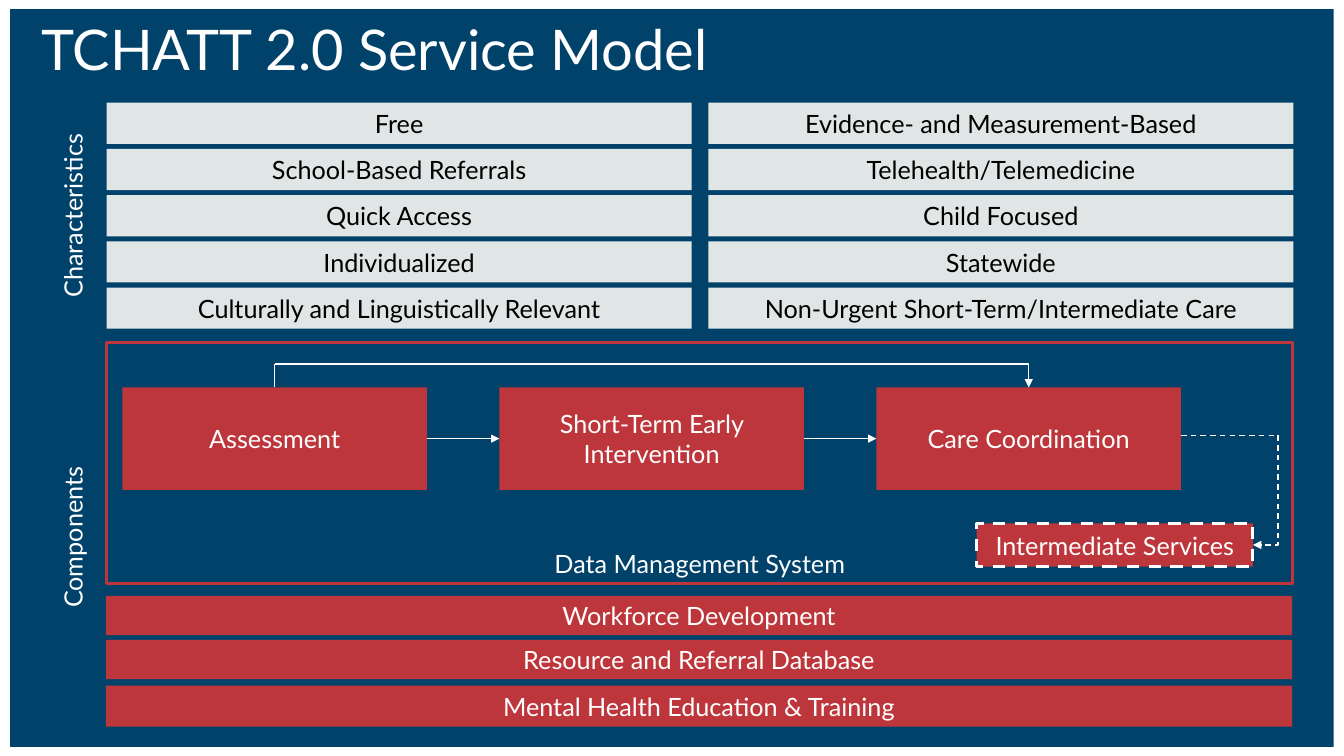
from dataclasses import dataclass
from typing import Optional

import pptx
import pptx.dml.color
import pptx.enum.dml
import pptx.enum.shapes
import pptx.enum.text
import pptx.oxml.ns
import pptx.oxml.xmlchemy
import pptx.util

Pt = pptx.util.Pt
RGBColor = pptx.dml.color.RGBColor
ANCHOR = pptx.enum.text.MSO_ANCHOR
ALIGN = pptx.enum.text.PP_ALIGN
CONNECTOR = pptx.enum.shapes.MSO_CONNECTOR
DASH = pptx.enum.dml.MSO_LINE.DASH
qn = pptx.oxml.ns.qn
new_element = pptx.oxml.xmlchemy.OxmlElement

NAVY = RGBColor(0x01, 0x42, 0x6A)
RED = RGBColor(0xBD, 0x36, 0x3C)
PALE = RGBColor(0xE0, 0xE6, 0xE6)
WHITE = RGBColor(0xFF, 0xFF, 0xFF)
BLACK = RGBColor(0, 0, 0)
FONT = "Lato"


@dataclass
class Box:
    text: str
    left: float
    top: float
    width: float
    height: float
    fill: Optional[RGBColor] = RED
    line: Optional[RGBColor] = None
    dashed: bool = False
    color: RGBColor = WHITE
    size: float = 18
    anchor: ANCHOR = ANCHOR.MIDDLE
    align: ALIGN = ALIGN.CENTER


@dataclass
class Link:
    start: tuple[float, float]
    end: tuple[float, float]
    bend: Optional[float] = None  # elbow position as a share of the width
    dashed: bool = False
    arrow: bool = True


def write_text(shape, box: Box) -> None:
    text_frame = shape.text_frame
    text_frame.text = box.text
    text_frame.word_wrap = True
    text_frame.vertical_anchor = box.anchor
    paragraph = text_frame.paragraphs[0]
    paragraph.alignment = box.align
    font = paragraph.runs[0].font
    font.name = FONT
    font.size = Pt(box.size)
    font.color.rgb = box.color


def add_box(slide, box: Box):
    shape = slide.shapes.add_shape(
        pptx.enum.shapes.MSO_SHAPE.RECTANGLE,
        Pt(box.left), Pt(box.top), Pt(box.width), Pt(box.height))
    shape.shadow.inherit = False
    if box.fill is None:
        shape.fill.background()
    else:
        shape.fill.solid()
        shape.fill.fore_color.rgb = box.fill
    if box.line is None:
        shape.line.fill.background()
    else:
        shape.line.color.rgb = box.line
        shape.line.width = Pt(2.25)
    if box.dashed:
        shape.line.dash_style = DASH
    write_text(shape, box)
    return shape


def add_side_label(slide, box: Box) -> None:
    shape = slide.shapes.add_textbox(
        Pt(box.left), Pt(box.top), Pt(box.width), Pt(box.height))
    write_text(shape, box)
    shape.text_frame._txBody.find(qn("a:bodyPr")).set("vert", "vert270")


def add_link(slide, link: Link):
    kind = CONNECTOR.STRAIGHT if link.bend is None else CONNECTOR.ELBOW
    connector = slide.shapes.add_connector(
        kind, *(Pt(value) for value in link.start + link.end))
    connector.line.color.rgb = WHITE
    connector.line.width = Pt(1)
    if link.dashed:
        connector.line.dash_style = DASH
    properties = connector._element.spPr
    if link.arrow:
        tail = new_element("a:tailEnd")
        tail.set("type", "triangle")
        properties.find(qn("a:ln")).append(tail)
    if link.bend is not None:
        guide = new_element("a:gd")
        guide.set("name", "adj1")
        guide.set("fmla", f"val {round(link.bend * 100000)}")
        properties.find(qn("a:prstGeom")).find(qn("a:avLst")).append(guide)
    properties.append(new_element("a:effectLst"))
    return connector


# Layout rules
GRID_LEFT, GRID_TOP, COLUMN_PITCH, ROW_PITCH = 76.2, 73.4, 429.8, 33
STEP_LEFT, STEP_TOP, STEP_PITCH = 87.4, 276.7, 269.3
STEP_WIDTH, STEP_HEIGHT = 217.6, 73.2
BYPASS_TOP = 260

CHARACTERISTICS = [
    ["Free", "School-Based Referrals", "Quick Access", "Individualized",
     "Culturally and Linguistically Relevant"],
    ["Evidence- and Measurement-Based", "Telehealth/Telemedicine",
     "Child Focused", "Statewide", "Non-Urgent Short-Term/Intermediate Care"],
]
STEPS = ["Assessment", "Short-Term Early Intervention", "Care Coordination"]
SUPPORTS = [
    Box("Workforce Development", 75.6, 425.6, 847.4, 28.1),
    Box("Resource and Referral Database", 75.6, 457.1, 847.4, 28.1),
    Box("Mental Health Education & Training", 75.6, 489.7, 847.4, 29.3),
]
SIDE_LABELS = [
    Box("Characteristics", 33.8, 73.4, 36, 161.3),
    Box("Components", 33.8, 247.7, 36, 272.2),
]


def main() -> None:
    presentation = pptx.Presentation()
    presentation.slide_width = Pt(960)
    presentation.slide_height = Pt(540)
    slide = presentation.slides.add_slide(presentation.slide_layouts[6])

    # Background panel with the title
    panel = add_box(slide, Box("TCHATT 2.0 Service Model", 7.2, 6.5, 945.4, 527,
                               NAVY, size=40, anchor=ANCHOR.TOP, align=ALIGN.LEFT))
    panel.text_frame.margin_left = Pt(22.6)

    # Section labels
    for label in SIDE_LABELS:
        add_side_label(slide, label)

    # Characteristics grid
    for column, names in enumerate(CHARACTERISTICS):
        for row, name in enumerate(names):
            add_box(slide, Box(name, GRID_LEFT + column * COLUMN_PITCH,
                               GRID_TOP + row * ROW_PITCH, 417.8, 29.4,
                               PALE, color=BLACK))

    # Components: frame, care steps and supporting services
    add_box(slide, Box("Data Management System", 76.2, 244.6, 847.4, 172.2,
                       None, RED, anchor=ANCHOR.BOTTOM))
    steps = [add_box(slide, Box(name, STEP_LEFT + index * STEP_PITCH, STEP_TOP,
                                STEP_WIDTH, STEP_HEIGHT))
             for index, name in enumerate(STEPS)]
    add_box(slide, Box("Intermediate Services", 697.7, 373.9, 197.3, 30.9,
                       line=WHITE, dashed=True))
    for support in SUPPORTS:
        add_box(slide, support)

    # Arrows from step to step
    middle = STEP_TOP + STEP_HEIGHT / 2
    for index, (source, target) in enumerate(zip(steps, steps[1:])):
        right = STEP_LEFT + index * STEP_PITCH + STEP_WIDTH
        connector = add_link(slide, Link(
            (right, middle), (STEP_LEFT + (index + 1) * STEP_PITCH, middle)))
        connector.begin_connect(source, 3)
        connector.end_connect(target, 1)

    # Bypass from assessment to care coordination
    first_center = STEP_LEFT + STEP_WIDTH / 2
    last_center = first_center + 2 * STEP_PITCH
    riser = add_link(slide, Link((first_center, STEP_TOP),
                                 (first_center, BYPASS_TOP), arrow=False))
    riser.begin_connect(steps[0], 0)
    add_link(slide, Link((first_center, BYPASS_TOP), (last_center, STEP_TOP), bend=1))

    # Dashed route to intermediate services
    add_link(slide, Link((843.6, 311), (895, 389.3), bend=1.35, dashed=True))

    presentation.save("out.pptx")


if __name__ == "__main__":
    main()
